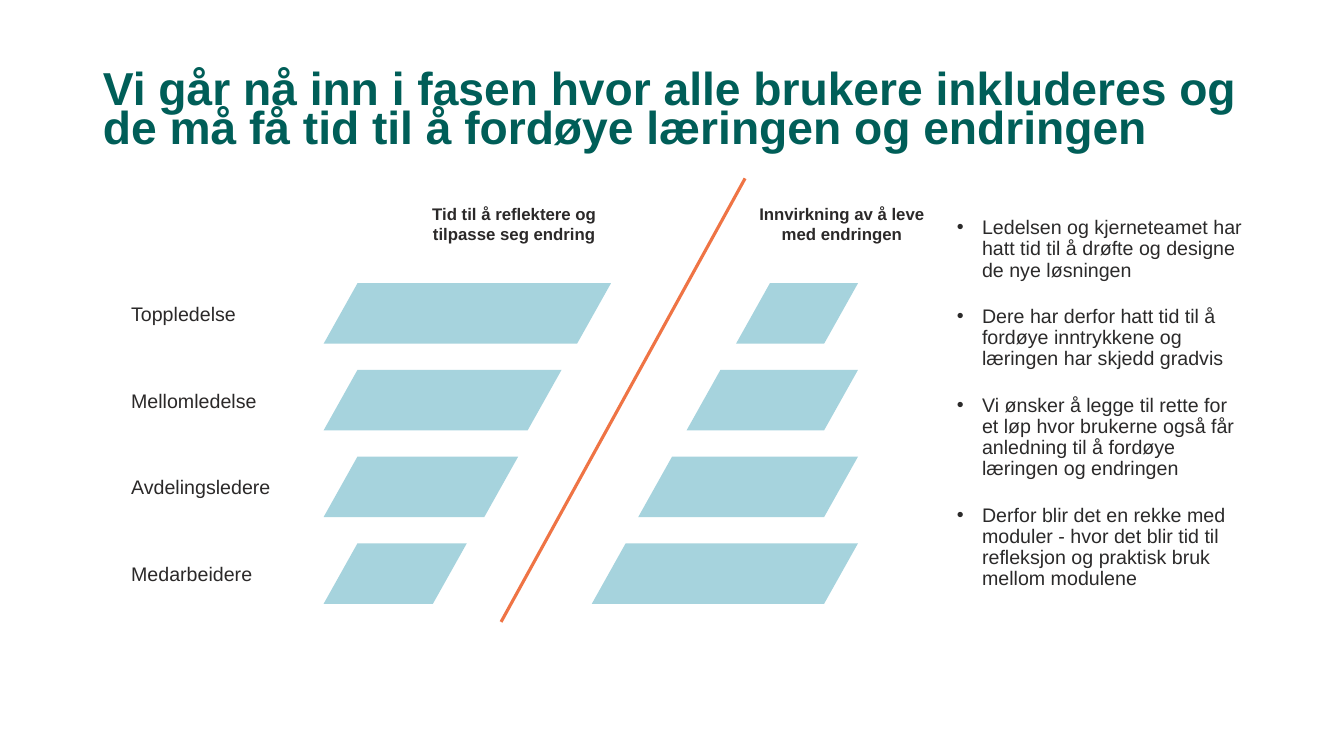
"""Build the slide on reflection time and impact of change per staff level."""
from dataclasses import dataclass

from lxml import etree
from pptx import Presentation
from pptx.dml.color import RGBColor
from pptx.enum.shapes import MSO_CONNECTOR, MSO_SHAPE
from pptx.enum.text import MSO_ANCHOR, MSO_AUTO_SIZE, PP_ALIGN
from pptx.oxml.ns import qn
from pptx.slide import Slide
from pptx.util import Inches, Pt

PARALLELOGRAM = MSO_SHAPE.PARALLELOGRAM
STRAIGHT = MSO_CONNECTOR.STRAIGHT
TOP, MIDDLE = MSO_ANCHOR.TOP, MSO_ANCHOR.MIDDLE
LEFT, CENTER = PP_ALIGN.LEFT, PP_ALIGN.CENTER
NO_FIT = MSO_AUTO_SIZE.NONE

FONT = "Arial"
GREEN = RGBColor(0x00, 0x5E, 0x58)
BLUE = RGBColor(0xA6, 0xD3, 0xDD)
ORANGE = RGBColor(0xEF, 0x74, 0x45)
DARK = RGBColor(0x2B, 0x29, 0x29)
BODY_DARK = RGBColor(0x2B, 0x2A, 0x2A)

ROW_TOP, ROW_PITCH, BAR_HEIGHT = 2.81, 0.86, 0.6
REFLECTION_LEFT, IMPACT_RIGHT = 3.21, 8.51
LABEL_HEIGHT = 0.31

TITLE = ("Vi går nå inn i fasen hvor alle brukere inkluderes og "
         "de må få tid til å fordøye læringen og endringen")
POINTS = (
    "Ledelsen og kjerneteamet har hatt tid til å drøfte og designe de nye løsningen",
    "Dere har derfor hatt tid til å fordøye inntrykkene og læringen har skjedd gradvis",
    "Vi ønsker å legge til rette for \vet løp hvor brukerne også får anledning "
    "til å fordøye læringen og endringen",
    "Derfor blir det en rekke med moduler - hvor det blir tid til refleksjon "
    "og praktisk bruk mellom modulene",
)


@dataclass(frozen=True)
class Level:
    name: str
    reflection: float
    impact: float


@dataclass(frozen=True)
class Heading:
    text: str
    left: float
    width: float


LEVELS = (
    Level("Toppledelse", 2.85, 1.21),
    Level("Mellomledelse", 2.36, 1.7),
    Level("Avdelingsledere", 1.93, 2.18),
    Level("Medarbeidere", 1.42, 2.64),
)
HEADINGS = (
    Heading("Tid til å reflektere og tilpasse seg endring", 4.14, 1.92),
    Heading("Innvirkning av å leve med endringen", 7.46, 1.78),
)


def set_font(paragraph, size: float, color: RGBColor, bold: bool = False) -> None:
    paragraph.font.name = FONT
    paragraph.font.size = Pt(size)
    paragraph.font.bold = bold
    paragraph.font.color.rgb = color


def place(shape, left: float, top: float, width: float, height: float) -> None:
    shape.left, shape.top = Inches(left), Inches(top)
    shape.width, shape.height = Inches(width), Inches(height)


def add_title(page: Slide) -> None:
    title = page.shapes.title
    place(title, 0.92, 0.66, 11.5, 0.93)
    frame = title.text_frame
    frame.text = TITLE
    frame.auto_size = NO_FIT
    frame.vertical_anchor = MIDDLE
    para = frame.paragraphs[0]
    para.alignment = LEFT
    para.line_spacing = 0.7
    set_font(para, 33, GREEN, bold=True)


def add_points(page: Slide) -> None:
    body = page.placeholders[1]
    place(body, 9.39, 2.11, 3.15, 4.05)
    frame = body.text_frame
    frame.auto_size = NO_FIT
    frame.vertical_anchor = TOP
    for index, point in enumerate(POINTS):
        para = frame.add_paragraph() if index else frame.paragraphs[0]
        para.text = point
        para.line_spacing = 0.9
        para.space_before = Pt(10 if index else 0)
        para.space_after = Pt(8)
        properties = para._p.get_or_add_pPr()
        properties.set("marL", str(Inches(0.25)))
        properties.set("indent", str(Inches(-0.25)))
        etree.SubElement(properties, qn("a:buFont"), typeface=FONT)
        etree.SubElement(properties, qn("a:buChar"), char="•")
        set_font(para, 14, BODY_DARK)


def add_text(page: Slide, text: str, left: float, top: float, width: float,
             height: float, size: float, bold: bool, align: PP_ALIGN,
             anchor: MSO_ANCHOR) -> None:
    box = page.shapes.add_textbox(Inches(left), Inches(top), Inches(width), Inches(height))
    frame = box.text_frame
    frame.word_wrap = True
    frame.vertical_anchor = anchor
    frame.margin_left = frame.margin_right = Inches(0.07)
    frame.margin_top = frame.margin_bottom = Inches(0.04)
    para = frame.paragraphs[0]
    para.text = text
    para.alignment = align
    set_font(para, size, DARK, bold)


def add_bar(page: Slide, left: float, top: float, width: float) -> None:
    bar = page.shapes.add_shape(PARALLELOGRAM, Inches(left), Inches(top),
                                Inches(width), Inches(BAR_HEIGHT))
    bar.adjustments[0] = 0.56
    bar.shadow.inherit = False
    bar.fill.solid()
    bar.fill.fore_color.rgb = BLUE
    bar.line.fill.background()


def add_divider(page: Slide) -> None:
    divider = page.shapes.add_connector(STRAIGHT, Inches(4.97), Inches(6.17),
                                        Inches(7.39), Inches(1.77))
    divider.line.color.rgb = ORANGE
    divider.line.width = Pt(2.25)
    etree.SubElement(divider._element.spPr, qn("a:effectLst"))


def main() -> None:
    deck = Presentation()
    deck.slide_width, deck.slide_height = Inches(13.33), Inches(7.5)
    page = deck.slides.add_slide(deck.slide_layouts[1])
    add_title(page)
    add_points(page)
    add_divider(page)
    for heading in HEADINGS:
        add_text(page, heading.text, heading.left, 1.98, heading.width, 0.48,
                 12, True, CENTER, TOP)
    for row, level in enumerate(LEVELS):
        top = ROW_TOP + row * ROW_PITCH
        label_top = top + (BAR_HEIGHT - LABEL_HEIGHT) / 2
        add_bar(page, REFLECTION_LEFT, top, level.reflection)
        add_bar(page, IMPACT_RIGHT - level.impact, top, level.impact)
        add_text(page, level.name, 1.23, label_top, 2.72, LABEL_HEIGHT,
                 14, False, LEFT, MIDDLE)
    deck.save("out.pptx")


if __name__ == "__main__":
    main()
